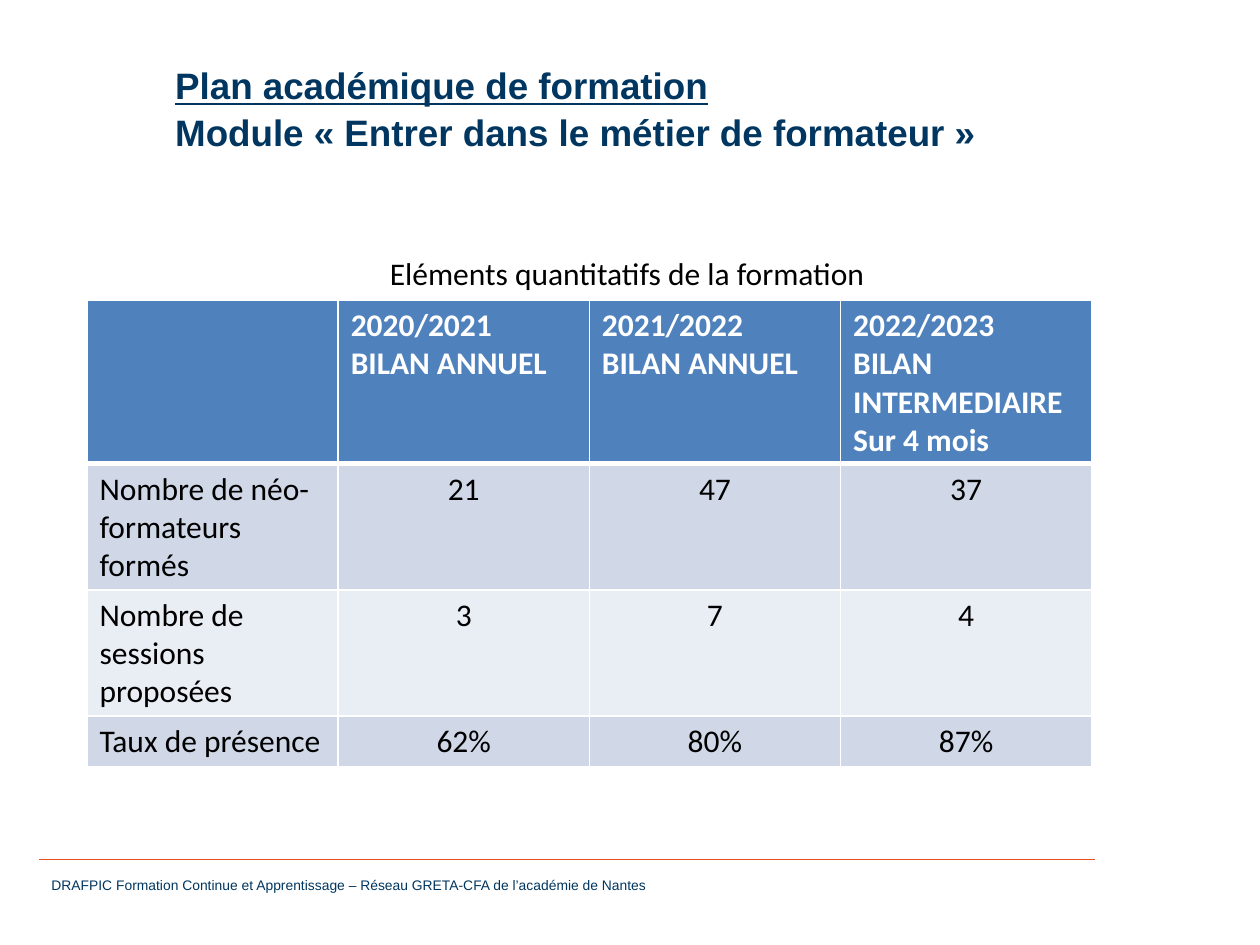
from collections import namedtuple

from lxml.etree import SubElement
from pptx import Presentation
from pptx.dml.color import RGBColor
from pptx.enum.shapes import MSO_CONNECTOR as Connector
from pptx.enum.text import MSO_ANCHOR as Anchor, MSO_AUTO_SIZE as AutoSize, PP_ALIGN as Align
from pptx.oxml.ns import qn
from pptx.util import Inches, Pt

COLORS = {
    "navy": "00365F", "orange": "E94E1B", "black": "000000", "white": "FFFFFF",
    "header": "4F81BD", "dark_band": "D0D8E8", "light_band": "E9EDF4",
}
WIDTH, HEIGHT = Inches(10), Inches(7.5)
COLUMN, ROW = WIDTH / 100, HEIGHT / 100
Box = namedtuple("Box", "left top width height")

HEADINGS = [
    "",
    "2020/2021\nBILAN ANNUEL",
    "2021/2022\nBILAN ANNUEL",
    "2022/2023\nBILAN INTERMEDIAIRE\nSur 4 mois",
]
RESULTS = [
    ["Nombre de néo-formateurs formés", "21", "47", "37"],
    ["Nombre de sessions proposées", "3", "7", "4"],
    ["Taux de présence", "62%", "80%", "87%"],
]
ROW_SHARES = [0.35, 0.27, 0.27, 0.11]


def grid_box(left, top, width, height):
    return Box(int(left * COLUMN), int(top * ROW), int(width * COLUMN), int(height * ROW))


def color(name):
    return RGBColor.from_string(COLORS[name])


def write(frame, text, size, font, ink, bold=False, align=Align.LEFT):
    frame.word_wrap = True
    frame.text = text
    for para in frame.paragraphs:
        para.alignment = align
        para.font.size = Pt(size)
        para.font.name = font
        para.font.bold = bold
        para.font.color.rgb = color(ink)


def place_title(page, box):
    title = page.shapes.title
    title.left, title.top, title.width, title.height = box
    frame = title.text_frame
    write(frame, "Plan académique de formation\nModule «\u00a0Entrer dans le métier de formateur\u00a0»",
          21, "Arial", "navy", bold=True)
    frame.auto_size = AutoSize.NONE
    frame.vertical_anchor = Anchor.TOP
    for para in frame.paragraphs:
        para.line_spacing = 1.06
    frame.paragraphs[0].font.underline = True


def place_caption(page, box):
    caption = page.shapes.add_textbox(*box)
    write(caption.text_frame, "Eléments quantitatifs de la formation ", 18, "Calibri", "black",
          align=Align.CENTER)


def set_borders(cell, top, bottom):
    properties = cell._tc.get_or_add_tcPr()
    for side, points in (("L", 1), ("R", 1), ("T", top), ("B", bottom)):
        line = SubElement(properties, qn(f"a:ln{side}"), w=str(Pt(points)))
        fill = SubElement(line, qn("a:solidFill"))
        SubElement(fill, qn("a:srgbClr"), val=COLORS["white"])


def place_results(page, box):
    rows = [HEADINGS] + RESULTS
    table = page.shapes.add_table(len(rows), len(HEADINGS), *box).table
    for row, share in zip(table.rows, ROW_SHARES):
        row.height = int(box.height * share)
    for r, values in enumerate(rows):
        is_header = r == 0
        band = "header" if is_header else "dark_band" if r % 2 else "light_band"
        for c, value in enumerate(values):
            cell = table.cell(r, c)
            set_borders(cell, top=3 if r == 1 else 1, bottom=3 if is_header else 1)
            cell.fill.solid()
            cell.fill.fore_color.rgb = color(band)
            write(cell.text_frame, value, 18, "Calibri", "white" if is_header else "black",
                  bold=is_header, align=Align.LEFT if is_header or c == 0 else Align.CENTER)


def place_footer(page, box):
    rule_end = int(86.9 * COLUMN)
    rule_top = box.top - int(1.2 * ROW)
    rule = page.shapes.add_connector(Connector.STRAIGHT, box.left, rule_top, rule_end, rule_top)
    rule.line.color.rgb = color("orange")
    rule.line.width = Pt(0.25)
    SubElement(rule._element.spPr, qn("a:effectLst"))
    footer = page.shapes.add_textbox(*box)
    write(footer.text_frame,
          "DRAFPIC Formation Continue et Apprentissage – Réseau GRETA-CFA de l’académie de Nantes",
          7.9, "Arial", "navy")


def main():
    deck = Presentation()
    deck.slide_width, deck.slide_height = WIDTH, HEIGHT
    page = deck.slides.add_slide(deck.slide_layouts[5])
    place_footer(page, grid_box(3.1, 92.13, 61.9, 3.07))
    place_title(page, grid_box(12.9, 5.73, 68.4, 10.8))
    place_caption(page, grid_box(29.3, 26.27, 41.5, 5.33))
    place_results(page, grid_box(6.9, 31.73, 79.76, 49.33))
    deck.save("out.pptx")


if __name__ == "__main__":
    main()
